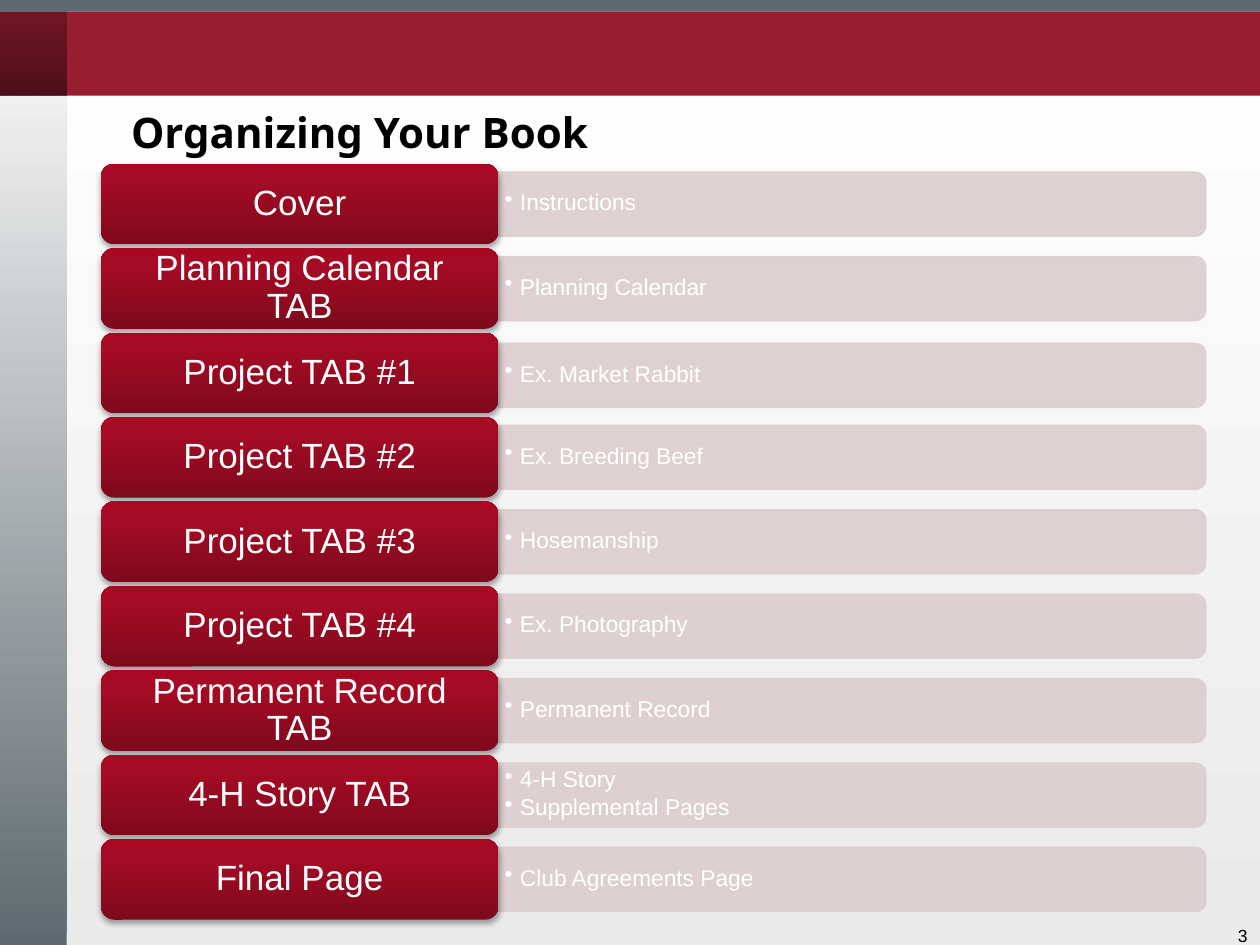
import pptx
import pptx.dml.color
import pptx.enum.shapes
import pptx.enum.text
import pptx.oxml.ns
import pptx.util
from lxml import etree

RGBColor = pptx.dml.color.RGBColor
SHAPES = pptx.enum.shapes.MSO_SHAPE
ALIGN = pptx.enum.text.PP_ALIGN
ANCHOR = pptx.enum.text.MSO_ANCHOR
Inches = pptx.util.Inches
Pt = pptx.util.Pt
qn = pptx.oxml.ns.qn

BLACK = RGBColor(0x00, 0x00, 0x00)
WHITE = RGBColor(0xFF, 0xFF, 0xFF)
MIST = RGBColor(0xEA, 0xEA, 0xEA)
SLATE = RGBColor(0x5E, 0x6A, 0x71)
CRIMSON = RGBColor(0x98, 0x1E, 0x32)
PANEL = RGBColor(0xDD, 0xCD, 0xCE)
TAB_DARK = RGBColor(0x7F, 0x09, 0x1C)
TAB_MID = RGBColor(0xA5, 0x0B, 0x25)
TAB_TOP = RGBColor(0xA9, 0x08, 0x23)

WIDTH, HEIGHT = 10, 7.5
SIDE_WIDTH, TOP_HEIGHT, BAND_HEIGHT = 0.53, 0.09, 0.67
ROW_PITCH, TAB_HEIGHT, PANEL_HEIGHT = 0.67, 0.64, 0.51
TAB_SHARE = 0.36
PANEL_NUDGE = {"Project TAB #1": 0.02}

SECTIONS = [
    ("Cover", ["Instructions"]),
    ("Planning Calendar TAB", ["Planning Calendar"]),
    ("Project TAB #1", ["Ex. Market Rabbit"]),
    ("Project TAB #2", ["Ex. Breeding Beef"]),
    ("Project TAB #3", ["Hosemanship"]),
    ("Project TAB #4", ["Ex. Photography"]),
    ("Permanent Record TAB", ["Permanent Record"]),
    ("4-H Story TAB", ["4-H Story", "Supplemental Pages"]),
    ("Final Page", ["Club Agreements Page"]),
]


def add_color(parent, color, opacity=100):
    node = etree.SubElement(parent, qn("a:srgbClr"), val=str(color))
    if opacity < 100:
        etree.SubElement(node, qn("a:alpha"), val=str(opacity * 1000))


def set_gradient(fill, owner, stops):
    """Fill from bottom to top with (position, colour, opacity) stops."""
    fill.gradient()
    fill.gradient_angle = 90
    stop_list = next(owner.iter(qn("a:gsLst")))
    for stop in list(stop_list):
        stop_list.remove(stop)
    for position, *color in stops:
        stop = etree.SubElement(stop_list, qn("a:gs"), pos=str(position * 1000))
        add_color(stop, *color)


def add_plain_shape(page, kind, box, color=None):
    shape = page.shapes.add_shape(kind, *(Inches(value) for value in box))
    shape.shadow.inherit = False
    shape.line.fill.background()
    if color is not None:
        shape.fill.solid()
        shape.fill.fore_color.rgb = color
    return shape


def write_text(frame, *lines, size, color=WHITE, font="Arial", bold=False,
               align=ALIGN.LEFT, anchor=ANCHOR.MIDDLE, insets=(0.1, 0.05),
               bullet=False, line_spacing=0.9, space_after=0):
    frame.word_wrap = True
    frame.vertical_anchor = anchor
    frame.margin_left = frame.margin_right = Inches(insets[0])
    frame.margin_top = frame.margin_bottom = Inches(insets[1])
    for index, line in enumerate(lines):
        para = frame.add_paragraph() if index else frame.paragraphs[0]
        if bullet:
            para.level = 1
            properties = para._p.get_or_add_pPr()
            properties.set("marL", str(Inches(0.12)))
            properties.set("indent", str(-Inches(0.12)))
            etree.SubElement(properties, qn("a:buChar"), char="•")
        para.alignment = align
        para.line_spacing = line_spacing
        para.space_after = Pt(space_after)
        span = para.add_run()
        span.text = line
        span.font.size = Pt(size)
        span.font.name = font
        span.font.bold = bold
        span.font.color.rgb = color


def add_frame(page, box):
    """Background, side strip and header bands."""
    left, top, width, height = box
    set_gradient(page.background.fill, page.element, [(0, MIST), (100, WHITE)])
    strip = add_plain_shape(page, SHAPES.RECTANGLE, (left, top, SIDE_WIDTH, height))
    set_gradient(strip.fill, strip.element, [(0, SLATE), (100, WHITE)])
    band_top = top + TOP_HEIGHT
    add_plain_shape(page, SHAPES.RECTANGLE, (left, band_top, width, BAND_HEIGHT), CRIMSON)
    corner = add_plain_shape(page, SHAPES.RECTANGLE, (left, band_top, SIDE_WIDTH, BAND_HEIGHT))
    set_gradient(corner.fill, corner.element, [(0, BLACK, 50), (100, BLACK, 25)])
    add_plain_shape(page, SHAPES.RECTANGLE, (left, top, width, TOP_HEIGHT), SLATE)


def add_title(page, box):
    title = page.shapes.title
    title.left, title.top, title.width, title.height = (Inches(value) for value in box)
    write_text(title.text_frame, "Organizing Your Book", size=24, color=BLACK,
               font="Noto Sans", bold=True, anchor=ANCHOR.BOTTOM, insets=(0.5, 0.05))


def add_panel(page, box, lines):
    """Pale panel rounded on its right side, with bulleted text."""
    left, top, width, height = box
    upright = (left + (width - height) / 2, top + (height - width) / 2, height, width)
    panel = add_plain_shape(page, SHAPES.ROUND_2_SAME_RECTANGLE, upright, PANEL)
    panel.rotation = 90
    panel.line.color.rgb = PANEL
    panel.line.width = Pt(0.75)
    for node in panel.element.spPr.iter(qn("a:srgbClr")):
        etree.SubElement(node, qn("a:alpha"), val="90000")
    text_box = (left, top + 0.02, width - 0.02, height - 0.05)
    label = page.shapes.add_textbox(*(Inches(value) for value in text_box))
    write_text(label.text_frame, *lines, size=13, insets=(0.05, 0.03),
               bullet=True, space_after=2)


def add_tab(page, box, text):
    """Red tab with a soft shadow below."""
    tab = add_plain_shape(page, SHAPES.ROUNDED_RECTANGLE, box)
    set_gradient(tab.fill, tab.element,
                 [(0, TAB_DARK), (80, TAB_MID), (100, TAB_TOP)])
    effects = tab.element.spPr.find(qn("a:effectLst"))
    shadow = etree.SubElement(effects, qn("a:outerShdw"), blurRad=str(Pt(3.1)),
                              dist=str(Pt(1.8)), dir="5400000", rotWithShape="0")
    add_color(shadow, BLACK, 35)
    write_text(tab.text_frame, text, size=20, align=ALIGN.CENTER, insets=(0.11, 0.07))


def add_sections(page, box):
    """One row for each section: panel behind, tab in front."""
    left, top, width = box
    tab_width = width * TAB_SHARE
    for row, (name, lines) in enumerate(SECTIONS):
        row_top = top + row * ROW_PITCH
        panel_top = row_top + (TAB_HEIGHT - PANEL_HEIGHT) / 2 + PANEL_NUDGE.get(name, 0)
        add_panel(page, (left + tab_width, panel_top, width - tab_width, PANEL_HEIGHT), lines)
        add_tab(page, (left, row_top, tab_width, TAB_HEIGHT), name)


def add_page_number(page, box):
    number = page.shapes.add_textbox(*(Inches(value) for value in box))
    write_text(number.text_frame, "3", size=10, color=BLACK, align=ALIGN.RIGHT,
               anchor=ANCHOR.BOTTOM, line_spacing=1.0)


def main():
    deck = pptx.Presentation()
    deck.slide_width, deck.slide_height = Inches(WIDTH), Inches(HEIGHT)
    page = deck.slides.add_slide(deck.slide_layouts[5])
    add_frame(page, (0, 0, WIDTH, HEIGHT))
    add_title(page, (0.54, 0.84, WIDTH - 0.54, 0.46))
    add_sections(page, (0.8, 1.3, 8.77))
    add_page_number(page, (8.64, 7.04, 1.36, 0.52))
    deck.save("out.pptx")


if __name__ == "__main__":
    main()
